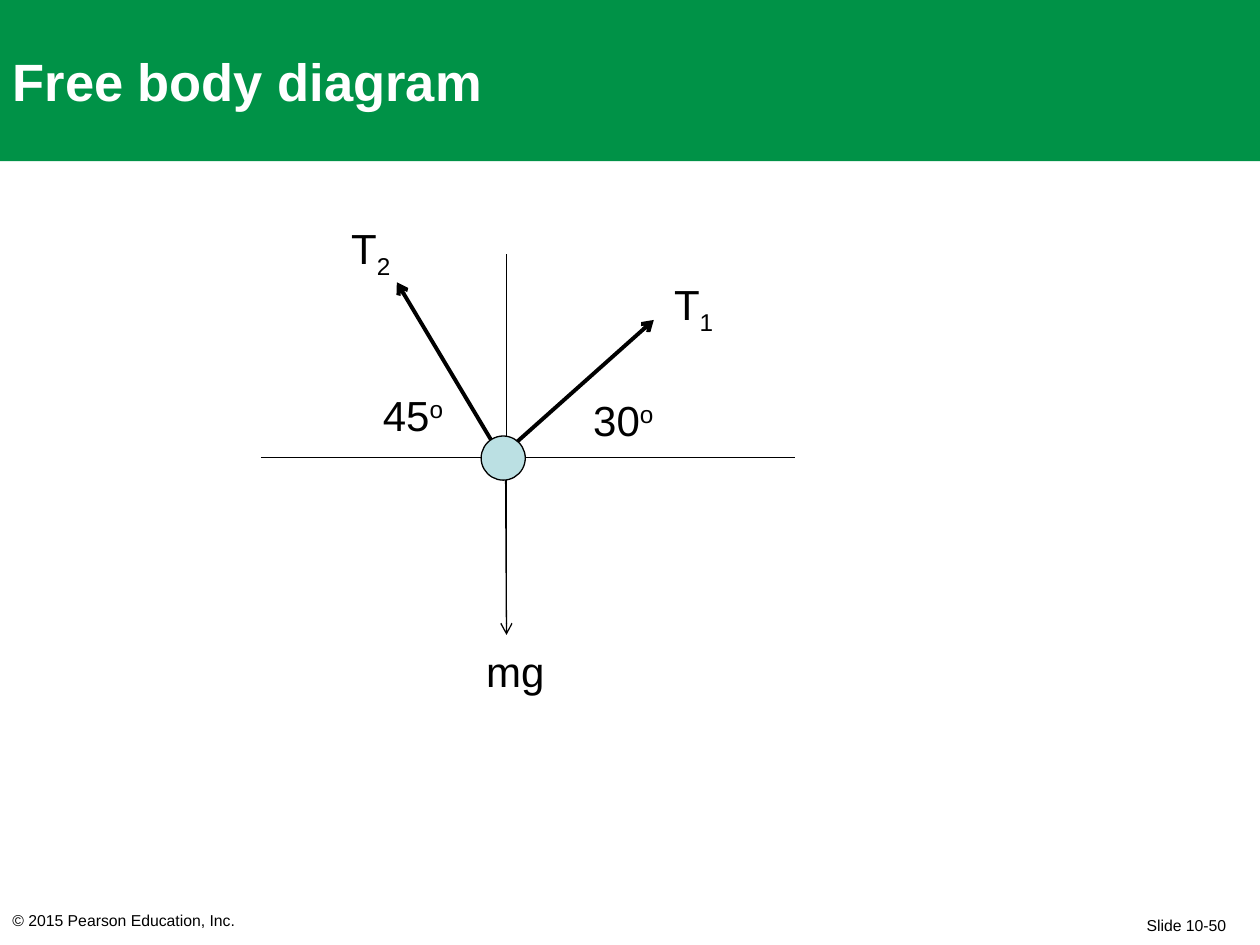
from lxml.etree import SubElement
from pptx import Presentation
from pptx.dml.color import RGBColor
from pptx.enum.shapes import MSO_CONNECTOR as Connector, MSO_SHAPE as Preset
from pptx.enum.text import MSO_ANCHOR as Anchor, MSO_AUTO_SIZE as AutoSize, PP_ALIGN as Align
from pptx.oxml.ns import qn
from pptx.util import Cm, Pt

COLORS = {"green": "009247", "ball": "BBE0E3", "black": "000000", "white": "FFFFFF"}
NO_INSETS = dict.fromkeys(("margin_left", "margin_top", "margin_right", "margin_bottom"), 0)
THIN, THICK = 0.75, 2.25


def color(name):
    return RGBColor.from_string(COLORS[name])


def apply_format(target, values):
    for name, value in values.items():
        setattr(target, name, value)


def write_text(shape, parts, size, text_color="black", bold=False, align=Align.LEFT, **frame_format):
    frame = shape.text_frame
    apply_format(frame, {"word_wrap": True, "auto_size": AutoSize.NONE, **frame_format})
    paragraph = frame.paragraphs[0]
    apply_format(paragraph, {"alignment": align, "space_before": Pt(0)})
    for text, baseline in parts:
        run = paragraph.add_run()
        run.text = text
        apply_format(run.font, {"name": "Arial", "size": Pt(size), "bold": bold})
        run.font.color.rgb = color(text_color)
        if baseline:
            run._r.get_or_add_rPr().set("baseline", str(baseline * 1000))


def add_text(slide, box, parts, size, **text_format):
    shape = slide.shapes.add_textbox(*map(Cm, box))
    write_text(shape, parts, size, **text_format)


def add_label(slide, left, top, width, base, script="", baseline=0):
    parts = [(base, 0)] + ([(script, baseline)] if script else [])
    add_text(slide, (left, top, width, 1.27), parts, 24,
             word_wrap=False, auto_size=AutoSize.SHAPE_TO_FIT_TEXT)


def add_line(slide, start, end, width=THIN, arrow=False):
    line = slide.shapes.add_connector(Connector.STRAIGHT, *map(Cm, (*start, *end)))
    line.line.color.rgb = color("black")
    line.line.width = Pt(width)
    properties = line._element.spPr
    if arrow:
        SubElement(properties.find(qn("a:ln")), qn("a:tailEnd"), type="arrow")
    SubElement(properties, qn("a:effectLst"))


def add_filled(slide, preset, box, fill, outline=None):
    shape = slide.shapes.add_shape(preset, *map(Cm, box))
    shape.shadow.inherit = False
    shape.fill.solid()
    shape.fill.fore_color.rgb = color(fill)
    if outline:
        shape.line.color.rgb = color(outline)
        shape.line.width = Pt(THIN)
    else:
        shape.line.fill.background()
    return shape


def add_header(slide):
    banner = add_filled(slide, Preset.RECTANGLE, (-0.03, 0, 25.46, 3.25), "green")
    title = slide.shapes.title
    title._element.addprevious(banner._element)
    apply_format(title, {"left": 0, "top": 0, "width": Cm(25.4), "height": Cm(3.23)})
    write_text(title, [("Free body diagram", 0)], 30, text_color="white", bold=True,
               vertical_anchor=Anchor.MIDDLE)


def add_footer(slide):
    add_text(slide, (19.05, 18.39, 5.92, 0.51), [("Slide 10-50", 0)], 9,
             align=Align.RIGHT, vertical_anchor=Anchor.MIDDLE)
    add_text(slide, (0.25, 18.36, 14.99, 0.51), [("© 2015 Pearson Education, Inc.", 0)], 9,
             **NO_INSETS)


def add_diagram(slide):
    add_line(slide, (5.26, 9.22), (16.03, 9.22))
    add_line(slide, (10.21, 5.13), (10.21, 12.67))
    add_line(slide, (10.19, 9.19), (10.21, 12.8), arrow=True)
    add_line(slide, (10.11, 9.22), (8, 5.69), THICK, arrow=True)
    add_line(slide, (10.16, 9.14), (13.18, 6.45), THICK, arrow=True)
    add_filled(slide, Preset.OVAL, (9.7, 8.79, 0.89, 0.89), "ball", "black")
    add_label(slide, 13.34, 5.49, 1.35, "T", "1", -25)
    add_label(slide, 6.83, 4.37, 1.35, "T", "2", -25)
    add_label(slide, 9.55, 12.88, 1.7, "mg")
    add_label(slide, 11.71, 7.82, 1.78, "30", "o", 30)
    add_label(slide, 7.47, 7.72, 1.78, "45", "o", 30)


def main():
    presentation = Presentation()
    apply_format(presentation, {"slide_width": Cm(25.4), "slide_height": Cm(19.05)})
    slide = presentation.slides.add_slide(presentation.slide_layouts.get_by_name("Title Only"))
    add_header(slide)
    add_footer(slide)
    add_diagram(slide)
    presentation.save("out.pptx")


if __name__ == "__main__":
    main()
